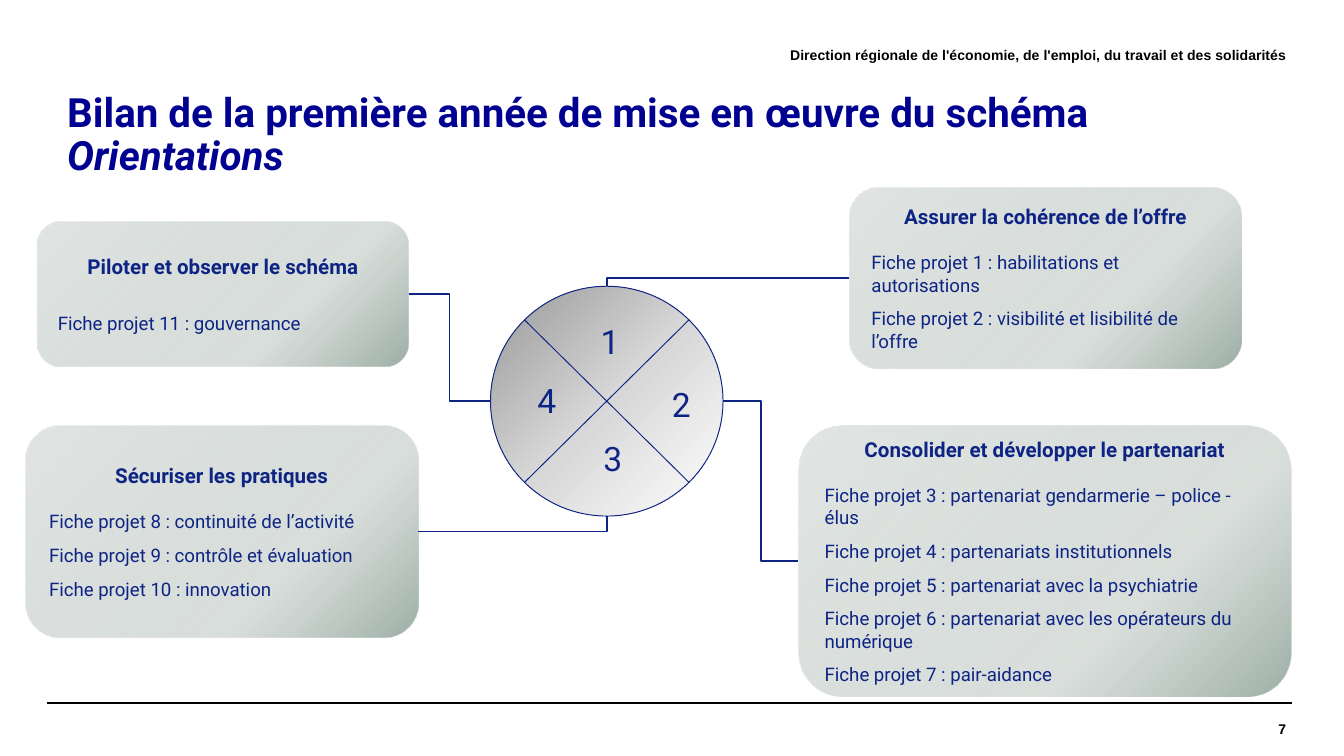
from dataclasses import dataclass

from lxml import etree
from pptx import Presentation
from pptx.dml.color import RGBColor
from pptx.enum.shapes import MSO_CONNECTOR, MSO_SHAPE
from pptx.enum.text import MSO_ANCHOR, MSO_AUTO_SIZE, PP_ALIGN
from pptx.oxml.ns import qn
from pptx.util import Inches, Pt

ROUNDED, JUNCTION = MSO_SHAPE.ROUNDED_RECTANGLE, MSO_SHAPE.FLOWCHART_SUMMING_JUNCTION
STRAIGHT, ELBOW = MSO_CONNECTOR.STRAIGHT, MSO_CONNECTOR.ELBOW
LEFT, CENTER, RIGHT = PP_ALIGN.LEFT, PP_ALIGN.CENTER, PP_ALIGN.RIGHT
TOP, MIDDLE = MSO_ANCHOR.TOP, MSO_ANCHOR.MIDDLE
FIT_SHAPE, NO_FIT = MSO_AUTO_SIZE.SHAPE_TO_FIT_TEXT, MSO_AUTO_SIZE.NONE

BLACK = RGBColor(0x00, 0x00, 0x00)
TITLE_BLUE = RGBColor(0x00, 0x00, 0x91)
NAVY = RGBColor(0x0E, 0x24, 0x84)

# Gradient stops: position in %, colour, opacity in %
SAGE = [(0, RGBColor(0x9C, 0xAE, 0xA5), 100), (32, RGBColor(0xC4, 0xCD, 0xC8), 64),
        (100, RGBColor(0xE2, 0xE6, 0xE4), 100)]
GREY = [(0, RGBColor(0x97, 0x97, 0x97), 100), (50, RGBColor(0xD7, 0xD7, 0xD7), 100),
        (100, RGBColor(0xFF, 0xFF, 0xFF), 100)]

CELL = Inches(0.1)
COLS, ROWS = 100, 56.25  # the slide in grid cells, 16:9


@dataclass(frozen=True)
class Area:
    """A rectangle in grid columns and rows."""
    col: float
    row: float
    cols: float
    rows: float

    @property
    def right(self) -> float:
        return self.col + self.cols

    @property
    def bottom(self) -> float:
        return self.row + self.rows

    @property
    def center(self) -> float:
        return self.col + self.cols / 2

    @property
    def middle(self) -> float:
        return self.row + self.rows / 2

    def emu(self) -> list[int]:
        return [grid(v) for v in (self.col, self.row, self.cols, self.rows)]


@dataclass(frozen=True)
class Card:
    area: Area
    heading: str
    projects: list[str]
    before_heading: float = 0
    after_heading: float = 0


WHEEL = Area(36.5, 21.3, 17.3, 17.1)
OFFER = Card(Area(63.2, 14, 29.2, 13.4), "Assurer la cohérence de l’offre",
             ["Fiche projet 1 : habilitations et autorisations",
              "Fiche projet 2 : visibilité et lisibilité de l’offre"], before_heading=6)
PARTNERS = Card(Area(59.4, 31.7, 36.7, 20.1), "Consolider et développer le partenariat",
                ["Fiche projet 3 : partenariat gendarmerie – police - élus",
                 "Fiche projet 4 : partenariats institutionnels",
                 "Fiche projet 5 : partenariat avec la psychiatrie",
                 "Fiche projet 6 : partenariat avec les opérateurs du numérique",
                 "Fiche projet 7 : pair-aidance"])
PRACTICES = Card(Area(1.9, 31.7, 29.2, 15.7), "Sécuriser les pratiques",
                 ["Fiche projet 8 : continuité de l’activité",
                  "Fiche projet 9 : contrôle et évaluation",
                  "Fiche projet 10 : innovation"])
STEERING = Card(Area(2.8, 16.5, 27.6, 10.8), "Piloter et observer le schéma",
                ["Fiche projet 11 : gouvernance"], after_heading=6)
NUMBERS = {"1": (43.7, 23.4), "2": (49, 28.1), "3": (43.9, 32.1), "4": (39, 27.8)}


def grid(cells: float) -> int:
    return round(cells * CELL)


def write(p, text, *, size, color, font="Roboto", bold=False, italic=False,
          align=LEFT, before=0, after=0):
    p.alignment = align
    p.space_before, p.space_after = Pt(before), Pt(after)
    r = p.add_run()
    r.text = text
    f = r.font
    f.name, f.size, f.bold, f.italic = font, Pt(size), bold, italic
    f.color.rgb = color


def add_text(s, area: Area, text: str, *, anchor=TOP, margin=None, wrap=True, **fmt):
    tb = s.shapes.add_textbox(*area.emu())
    tf = tb.text_frame
    tf.word_wrap, tf.vertical_anchor = wrap, anchor
    if margin is not None:
        tf.margin_left = tf.margin_right = tf.margin_top = tf.margin_bottom = margin
    if not wrap:
        tf.auto_size = FIT_SHAPE
    write(tf.paragraphs[0], text, **fmt)


def fill_gradient(sp, stops, angle: int):
    """Fill with any number of stops; the angle turns clockwise."""
    sp.fill.gradient()
    grad = sp.element.spPr.find(qn("a:gradFill"))
    stop_list = grad.find(qn("a:gsLst"))
    for old in list(stop_list):
        stop_list.remove(old)
    for pos, color, opacity in stops:
        gs = etree.SubElement(stop_list, qn("a:gs"), pos=str(pos * 1000))
        clr = etree.SubElement(gs, qn("a:srgbClr"), val=str(color))
        if opacity < 100:
            etree.SubElement(clr, qn("a:alpha"), val=str(opacity * 1000))
    grad.find(qn("a:lin")).set("ang", str(angle * 60000))


def add_shape(s, kind, area: Area, stops, angle: int):
    sp = s.shapes.add_shape(kind, *area.emu())
    sp.shadow.inherit = False
    fill_gradient(sp, stops, angle)
    return sp


def add_card(s, card: Card):
    sp = add_shape(s, ROUNDED, card.area, SAGE, 225)
    sp.line.fill.background()
    tf = sp.text_frame
    tf.word_wrap, tf.vertical_anchor = True, MIDDLE
    write(tf.paragraphs[0], card.heading, size=11, color=NAVY, bold=True, align=CENTER,
          before=card.before_heading, after=card.after_heading)
    for i, project in enumerate(card.projects):
        write(tf.add_paragraph(), project, size=10, color=NAVY, before=6 if i else 12)


def add_line(s, start, end, color, width, kind=STRAIGHT, one_bend=False):
    cx = s.shapes.add_connector(kind, *map(grid, start + end))
    cx.line.color.rgb, cx.line.width = color, Pt(width)
    spPr = cx.element.spPr
    etree.SubElement(spPr, qn("a:effectLst"))
    if one_bend:
        spPr.find(qn("a:prstGeom")).set("prst", "bentConnector2")


def add_title(s):
    title = s.shapes.title
    title.left, title.top, title.width, title.height = Area(4, 6.9, 92.1, 5.9).emu()
    tf = title.text_frame
    tf.word_wrap, tf.vertical_anchor, tf.auto_size = True, MIDDLE, NO_FIT
    tf.margin_top = CELL
    p = tf.paragraphs[0]
    p.line_spacing = 0.9
    fmt = dict(size=21.6, color=TITLE_BLUE, bold=True)
    write(p, "Bilan de la première année de mise en œuvre du schéma", **fmt)
    p.add_line_break()
    write(p, "Orientations", italic=True, **fmt)


def main():
    prs = Presentation()
    prs.slide_width, prs.slide_height = grid(COLS), grid(ROWS)
    s = prs.slides.add_slide(prs.slide_layouts[5])

    for col in (3.5, 3.9):
        add_line(s, (col, 52.3), (col + 92.2, 52.3), BLACK, 0.8)
    small = dict(size=7.5, color=BLACK, font="Arial", bold=True, align=RIGHT,
                 anchor=MIDDLE, margin=0)
    add_text(s, Area(80.9, 52.3, 14.8, 3.9), "7", **small)
    add_text(s, Area(31.4, 2.1, 64.3, 3.9), "Direction régionale de l'économie, "
             "de l'emploi, du travail et des solidarités", **small)
    add_title(s)

    wheel = add_shape(s, JUNCTION, WHEEL, GREY, 45)
    wheel.line.color.rgb, wheel.line.width = NAVY, Pt(0.5)
    for card in (OFFER, PARTNERS, PRACTICES, STEERING):
        add_card(s, card)

    offer, partners, practices, steering = (
        c.area for c in (OFFER, PARTNERS, PRACTICES, STEERING))
    for start, end, one_bend in [
        ((offer.col, offer.middle), (WHEEL.center, WHEEL.row), True),
        ((WHEEL.right, WHEEL.middle), (partners.col, partners.middle), False),
        ((practices.right, practices.middle), (WHEEL.center, WHEEL.bottom), True),
        ((steering.right, steering.middle), (WHEEL.col, WHEEL.middle), False),
    ]:
        add_line(s, start, end, NAVY, 1, ELBOW, one_bend)

    for number, (col, row) in NUMBERS.items():
        add_text(s, Area(col, row, 3.1, 4), number, wrap=False, size=18, color=NAVY)

    prs.save("out.pptx")


if __name__ == "__main__":
    main()
